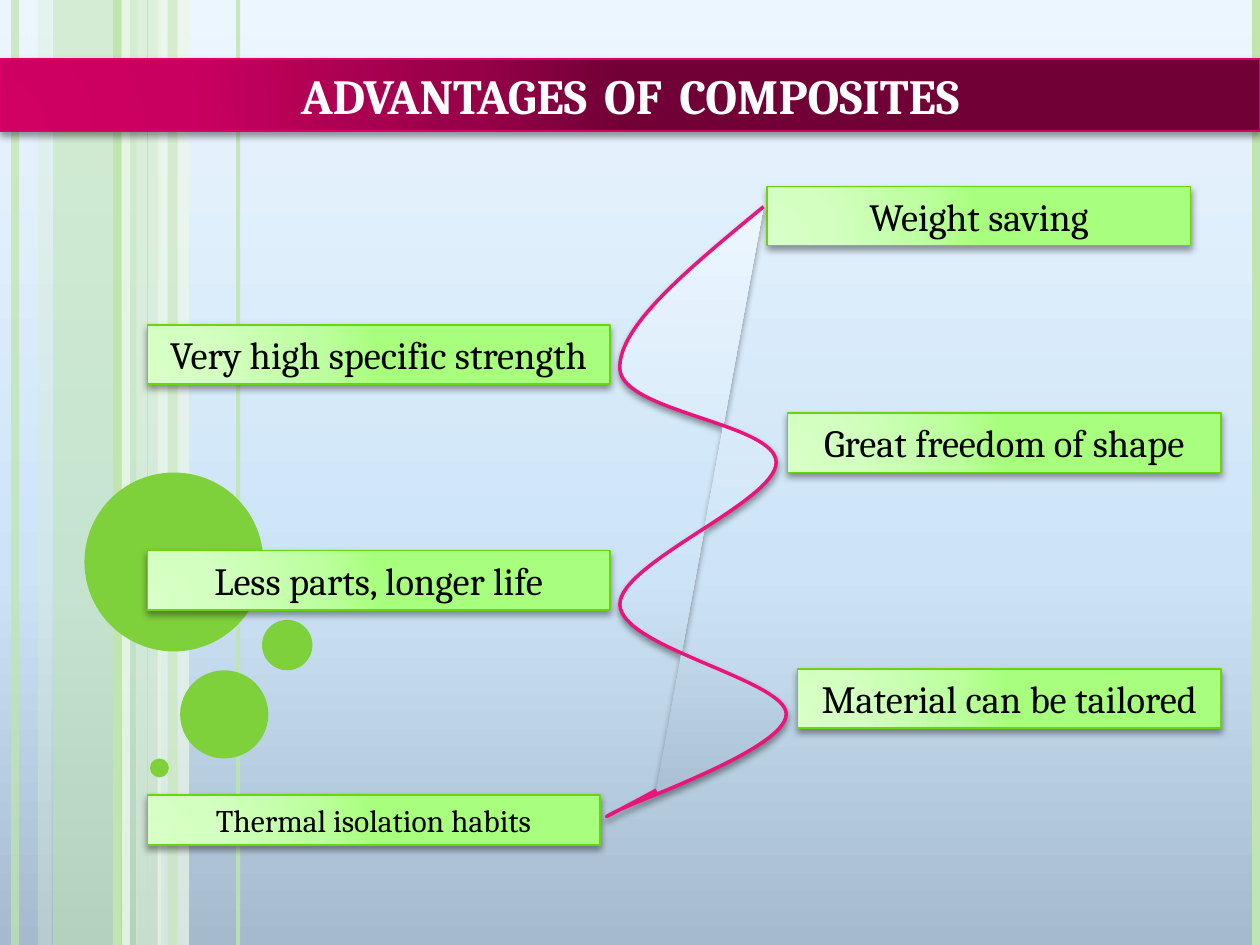
"""Build the slide on the advantages of composites."""
from dataclasses import dataclass

from lxml import etree
from pptx import Presentation
from pptx.dml.color import RGBColor
from pptx.enum.shapes import MSO_CONNECTOR, MSO_SHAPE
from pptx.enum.text import MSO_ANCHOR, MSO_AUTO_SIZE, PP_ALIGN
from pptx.oxml import parse_xml
from pptx.oxml.ns import nsdecls, qn
from pptx.util import Inches, Pt

RECTANGLE, OVAL = MSO_SHAPE.RECTANGLE, MSO_SHAPE.OVAL
STRAIGHT = MSO_CONNECTOR.STRAIGHT
TOP, BOTTOM = MSO_ANCHOR.TOP, MSO_ANCHOR.BOTTOM
CENTER = PP_ALIGN.CENTER
NO_FIT, GROW = MSO_AUTO_SIZE.NONE, MSO_AUTO_SIZE.SHAPE_TO_FIT_TEXT


@dataclass(frozen=True)
class Theme:
    font: str = "Cambria"
    title_size: int = 28
    label_size: int = 22
    small_size: int = 18
    white: str = "FFFFFF"
    black: str = "000000"
    stripe: str = "C0E5AF"
    pale_stripe: str = "D8EECE"
    faint_stripe: str = "ECF7E8"
    bubble: str = "7FD13B"
    title_line: str = "DA0068"
    label_line: str = "6AD312"
    curve_line: str = "EA157A"
    sky: tuple = ((0, "A5BBCD"), (40, "CDE4F7"), (100, "ECF6FF"))
    magenta: tuple = ((0, "D10063"), (30, "C9005F"), (75, "970048"), (100, "700035"))
    green: tuple = ((0, "D7FFC6"), (30, "D3FFC1"), (75, "BDFFA0"), (100, "A8FF7D"))


THEME = Theme()
LINEAR = '<a:lin ang="16200000" scaled="0"/>'
RADIAL = ('<a:path path="circle"><a:fillToRect l="5000" t="100000" '
          'r="120000" b="10000"/></a:path>')


def fill_gradient(fill, properties, stops, direction):
    fill.solid()
    stop_list = "".join(
        f'<a:gs pos="{position * 1000}"><a:srgbClr val="{color}"/></a:gs>'
        for position, color in stops)
    gradient = parse_xml(
        f'<a:gradFill {nsdecls("a")} rotWithShape="1">'
        f'<a:gsLst>{stop_list}</a:gsLst>{direction}</a:gradFill>')
    properties.replace(properties.find(qn("a:solidFill")), gradient)


def set_opacity(shape, percent):
    for color in shape.element.spPr.iter(qn("a:srgbClr")):
        etree.SubElement(color, qn("a:alpha"), val=str(percent * 1000))


presentation = Presentation()
presentation.slide_width, presentation.slide_height = Inches(10), Inches(7.5)
slide = presentation.slides.add_slide(presentation.slide_layouts[5])
shapes = slide.shapes
background_fill = slide.background.fill
background_fill.solid()
background = next(slide.element.iter(qn("p:bgPr")))
fill_gradient(background_fill, background, THEME.sky, LINEAR)
decorations = []

bands = [
    (0.42, 0.67, THEME.stripe, 54),
    (0.3, 0.11, THEME.pale_stripe, 36),
    (1.08, 0.2, THEME.pale_stripe, 70),
    (1.25, 0.25, THEME.faint_stripe, 71),
    (1.33, 0.08, THEME.stripe, 51),
]
for left, width, color, opacity in bands:
    band = shapes.add_shape(RECTANGLE, Inches(left), 0, Inches(width), Inches(7.5))
    band.shadow.inherit = False
    band.fill.solid()
    band.fill.fore_color.rgb = RGBColor.from_string(color)
    band.line.fill.background()
    set_opacity(band, opacity)
    decorations.append(band)

stripes = [
    (0.12, THEME.stripe, 4.5, 73),
    (1, THEME.faint_stripe, 4.5, 83),
    (0.93, THEME.stripe, 4.5, 100),
    (1.89, THEME.stripe, 2.25, 82),
    (1.17, THEME.stripe, 0.75, 100),
    (9.97, THEME.stripe, 4.5, 100),
]
for x, color, width, opacity in stripes:
    stripe = shapes.add_connector(STRAIGHT, Inches(x), 0, Inches(x), Inches(7.5))
    stripe.line.color.rgb = RGBColor.from_string(color)
    stripe.line.width = Pt(width)
    set_opacity(stripe, opacity)
    etree.SubElement(stripe.element.spPr, qn("a:effectLst"))
    decorations.append(stripe)

bubbles = [(0.67, 3.75, 1.42), (1.43, 5.32, 0.7), (1.19, 6.02, 0.15),
           (1.82, 6.33, 0.3), (2.08, 4.92, 0.4)]
for left, top, size in bubbles:
    bubble = shapes.add_shape(OVAL, Inches(left), Inches(top), Inches(size), Inches(size))
    bubble.shadow.inherit = False
    bubble.fill.solid()
    bubble.fill.fore_color.rgb = RGBColor.from_string(THEME.bubble)
    bubble.line.fill.background()
    decorations.append(bubble)

master_tree = presentation.slide_master.element.cSld.spTree
for number, decoration in enumerate(decorations, start=101):
    next(decoration.element.iter(qn("p:cNvPr"))).set("id", str(number))
    master_tree.append(decoration.element)

title = shapes.title
title.left, title.top = Inches(0), Inches(0.47)
title.width, title.height = Inches(10), Inches(0.57)
title.text_frame.text = "ADVANTAGES  OF  COMPOSITES"
title.text_frame.vertical_anchor = BOTTOM
title.text_frame.auto_size = NO_FIT
title_paragraph = title.text_frame.paragraphs[0]
title_paragraph.alignment = CENTER
title_font = title_paragraph.runs[0].font
title_font.name = THEME.font
title_font.size = Pt(THEME.title_size)
title_font.bold = True
title_font.color.rgb = RGBColor.from_string(THEME.white)
next(title.element.iter(qn("a:rPr"))).set("cap", "small")
raised = [(title, THEME.magenta, RADIAL, THEME.title_line, 1)]

labels = [
    ("Very high specific strength", 1.17, 2.58, 3.67, 0.47, THEME.label_size),
    ("Great freedom of shape", 6.25, 3.28, 3.44, 0.47, THEME.label_size),
    ("Less parts, longer life", 1.17, 4.37, 3.67, 0.47, THEME.label_size),
    ("Material can be tailored", 6.33, 5.31, 3.36, 0.47, THEME.label_size),
    ("Weight saving", 6.09, 1.48, 3.36, 0.47, THEME.label_size),
    ("Thermal isolation habits", 1.17, 6.31, 3.59, 0.4, THEME.small_size),
]
for text, left, top, width, height, size in labels:
    label = shapes.add_shape(
        RECTANGLE, Inches(left), Inches(top), Inches(width), Inches(height))
    label.text_frame.text = text
    label.text_frame.word_wrap = True
    label.text_frame.vertical_anchor = TOP
    label.text_frame.auto_size = GROW
    paragraph = label.text_frame.paragraphs[0]
    paragraph.alignment = CENTER
    paragraph.font.name = THEME.font
    paragraph.font.size = Pt(size)
    paragraph.font.color.rgb = RGBColor.from_string(THEME.black)
    raised.append((label, THEME.green, RADIAL, THEME.label_line, 1))

curve_points = [
    (5.48, 2.12), (4.9, 2.59), (4.92, 2.93),
    (4.94, 3.27), (6.16, 3.36), (6.16, 3.67),
    (6.16, 3.98), (4.91, 4.47), (4.92, 4.8),
    (4.93, 5.14), (6.25, 5.4), (6.24, 5.67),
    (6.23, 5.95), (5.02, 6.36), (4.85, 6.46),
    (4.67, 6.56), (5.21, 6.27), (5.21, 6.27),
]
builder = shapes.build_freeform(Inches(6.06), Inches(1.64))
builder.add_line_segments([(Inches(x), Inches(y)) for x, y in curve_points], close=False)
curve = builder.convert_to_shape()
segments = list(curve.element.iter(qn("a:lnTo")))
for index in range(0, len(segments), 3):
    bezier = etree.Element(qn("a:cubicBezTo"))
    segments[index].addprevious(bezier)
    for segment in segments[index:index + 3]:
        bezier.append(segment[0])
        segment.getparent().remove(segment)
raised.append((curve, THEME.sky, LINEAR, THEME.curve_line, 2))

for shape, stops, direction, line_color, line_width in raised:
    fill_gradient(shape.fill, shape.element.spPr, stops, direction)
    shape.line.color.rgb = RGBColor.from_string(line_color)
    shape.line.width = Pt(line_width)
    shape.shadow.inherit = False
    effects = shape.element.spPr.find(qn("a:effectLst"))
    effects.append(parse_xml(
        f'<a:outerShdw {nsdecls("a")} blurRad="{Pt(4)}" dist="{Pt(2)}" dir="5400000" '
        f'rotWithShape="0"><a:srgbClr val="{THEME.black}"><a:alpha val="40000"/>'
        '</a:srgbClr></a:outerShdw>'))

presentation.save("out.pptx")
